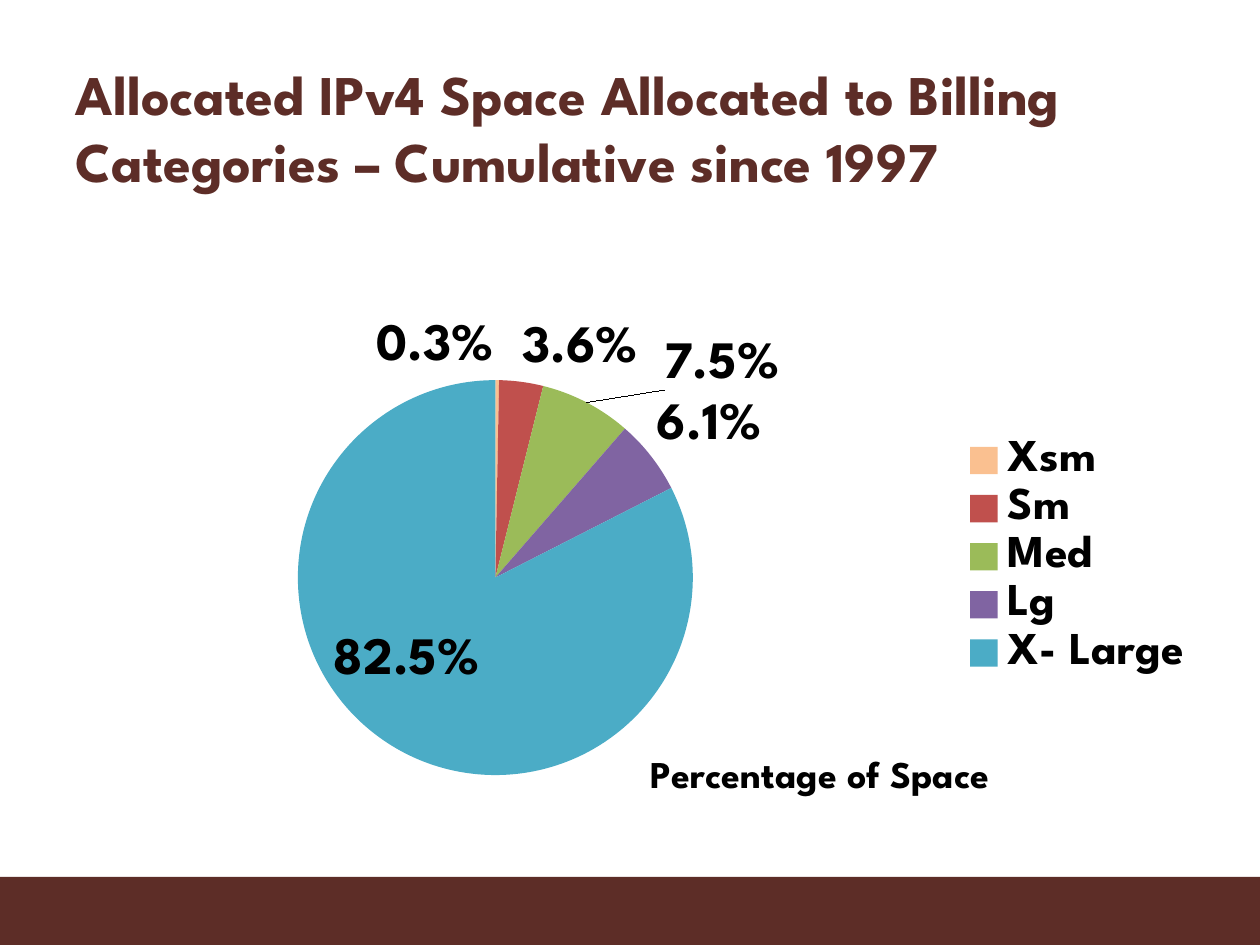
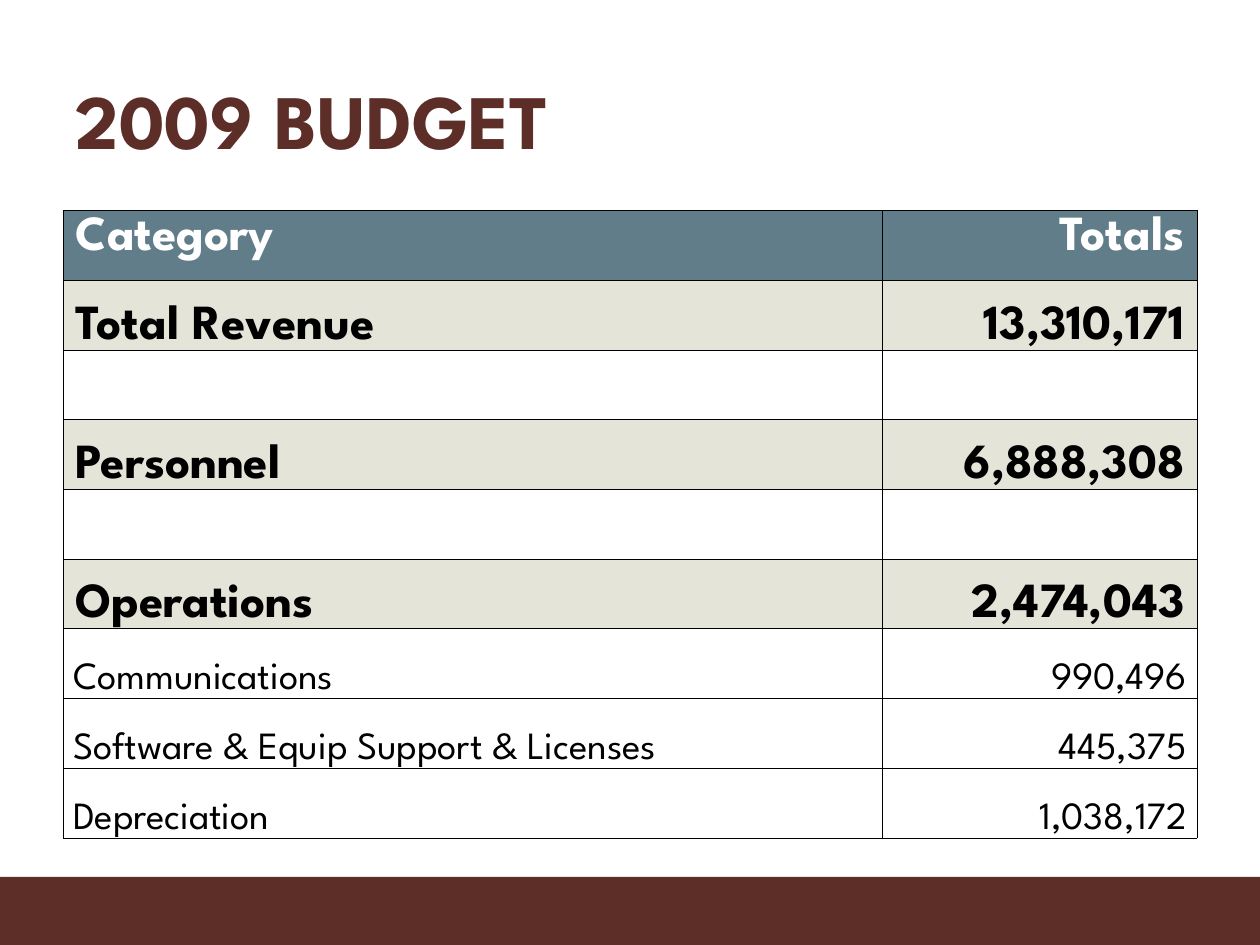
from lxml.etree import SubElement
from pptx import Presentation
from pptx.chart.data import CategoryChartData
from pptx.dml.color import RGBColor
from pptx.enum.chart import XL_CHART_TYPE, XL_LABEL_POSITION, XL_LEGEND_POSITION
from pptx.enum.shapes import MSO_SHAPE
from pptx.enum.text import MSO_ANCHOR, MSO_AUTO_SIZE, PP_ALIGN
from pptx.oxml import parse_xml
from pptx.oxml.ns import nsdecls, qn
from pptx.util import Inches, Pt

FACE = "League Spartan"
BROWN = RGBColor(0x5D, 0x2D, 0x27)
SLATE = RGBColor(0x61, 0x7D, 0x89)
SAND = RGBColor(0xE5, 0xE4, 0xD9)
WHITE = RGBColor(0xFF, 0xFF, 0xFF)
BLACK = RGBColor(0, 0, 0)
PEACH = RGBColor(0xFA, 0xC0, 0x90)
RED = RGBColor(0xC0, 0x50, 0x4D)
GREEN = RGBColor(0x9B, 0xBB, 0x59)
PURPLE = RGBColor(0x80, 0x64, 0xA2)
TEAL = RGBColor(0x4B, 0xAC, 0xC6)

OUT, MID = XL_LABEL_POSITION.OUTSIDE_END, XL_LABEL_POSITION.CENTER

SPACE_TITLE = "Allocated IPv4 Space Allocated to Billing Categories – Cumulative since 1997"
SERIES = "Percentage of Space"
# name, share, colour, label position, label shift as a fraction of the chart
SLICES = [
    ("Xsm", 0.003, PEACH, OUT, (-0.05, 0)),
    ("Sm", 0.036, RED, OUT, None),
    ("Med", 0.075, GREEN, OUT, (0.06, -0.01)),
    ("Lg", 0.061, PURPLE, OUT, None),
    ("X- Large", 0.825, TEAL, MID, (-0.03, 0)),
]

BUDGET_TITLE = "2009 BUDGET"
# row style, category, total
BUDGET = [
    ("head", "Category", "Totals"),
    ("sum", "Total Revenue", "13,310,171"),
    ("item", "", ""),
    ("sum", "Personnel", "6,888,308"),
    ("item", "", ""),
    ("sum", "Operations", "2,474,043"),
    ("item", "Communications", "990,496"),
    ("item", "Software & Equip Support & Licenses", "445,375"),
    ("item", "Depreciation", "1,038,172"),
]
# fill, text colour, size, bold, side margin, top and bottom margin, anchor
STYLES = {
    "head": (SLATE, WHITE, 28, True, 0.1, 0.05, MSO_ANCHOR.TOP),
    "sum": (SAND, BLACK, 28, True, 0.1, 0, MSO_ANCHOR.BOTTOM),
    "item": (WHITE, BLACK, 22, False, 0.08, 0, MSO_ANCHOR.BOTTOM),
}


def style(font, size, color=BLACK, bold=True):
    font.name, font.size, font.bold = FACE, Pt(size), bold
    font.color.rgb = color


def start(deck, text, size, height):
    """Add a slide with the title and the bottom band."""
    slide = deck.slides.add_slide(deck.slide_layouts[5])
    band = slide.shapes.add_shape(
        MSO_SHAPE.RECTANGLE, 0, Inches(6.96), Inches(10), Inches(0.54))
    band.shadow.inherit = False
    band.fill.solid()
    band.fill.fore_color.rgb = BROWN
    band.line.fill.background()

    title = slide.shapes.title
    title.left, title.top = Inches(0.5), Inches(0.38)
    title.width, title.height = Inches(9), Inches(height)
    frame = title.text_frame
    frame.auto_size = MSO_AUTO_SIZE.NONE
    frame.vertical_anchor = MSO_ANCHOR.MIDDLE
    par = frame.paragraphs[0]
    par.alignment = PP_ALIGN.LEFT
    run = par.add_run()
    run.text = text
    style(run.font, size, BROWN)
    return slide


def place(part, index, edge=False, inner=False, **spots):
    """Give a chart part a manual layout, as fractions of the chart."""
    for old in part.findall(qn("c:layout")):
        part.remove(old)
    layout = parse_xml(f"<c:layout {nsdecls('c')}><c:manualLayout/></c:layout>")
    pairs = [("layoutTarget", "inner")] if inner else []
    if edge:
        pairs += [("xMode", "edge"), ("yMode", "edge")]
    for tag, val in pairs + list(spots.items()):
        SubElement(layout[0], qn(f"c:{tag}")).set("val", str(val))
    part.insert(index, layout)


def add_pie(slide):
    data = CategoryChartData(number_format="0.0%")
    data.categories = [row[0] for row in SLICES]
    data.add_series(SERIES, [row[1] for row in SLICES])
    chart = slide.shapes.add_chart(
        XL_CHART_TYPE.PIE, 0, Inches(1.83), Inches(9.83), Inches(4.75), data).chart
    chart.font.name, chart.font.size = "Calibri", Pt(18)
    chart.font.color.rgb = BLACK

    chart.has_title = True
    run = chart.chart_title.text_frame.paragraphs[0].add_run()
    run.text = SERIES
    style(run.font, 21.6)
    place(chart.chart_title._element, 1, edge=True, x=0.52, y=0.87)

    chart.has_legend = True
    legend = chart.legend
    legend.position = XL_LEGEND_POSITION.RIGHT
    legend.include_in_layout = False
    style(legend.font, 26)
    place(legend._element, 1, edge=True, x=0.77, y=0.34, w=0.2, h=0.41)

    plot = chart.plots[0]
    plot.vary_by_categories = True
    place(plot._element.getparent(), 0, edge=True, inner=True,
          x=0.24, y=0.25, w=0.32, h=0.66)

    series = plot.series[0]
    labels = series.data_labels
    labels.show_value = True
    labels.number_format, labels.number_format_is_linked = "0.0%", False
    style(labels.font, 30)
    for i, (_, _, color, spot, shift) in enumerate(SLICES):
        point = series.points[i]
        point.format.fill.solid()
        point.format.fill.fore_color.rgb = color
        label = point.data_label
        style(label.font, 30)
        label.position = spot
        if shift:
            node = series._element.xpath(f"c:dLbls/c:dLbl[c:idx/@val='{i}']")[0]
            place(node, 1, x=shift[0], y=shift[1])


def border(cell):
    props = cell._tc.get_or_add_tcPr()
    for i, side in enumerate(("lnL", "lnR", "lnT", "lnB")):
        props.insert(i, parse_xml(
            f'<a:{side} {nsdecls("a")} w="{Pt(0.25)}"><a:solidFill>'
            f'<a:srgbClr val="{BLACK}"/></a:solidFill></a:{side}>'))


def fill_cell(cell, kind, text, align):
    fill, color, size, bold, side, edge, anchor = STYLES[kind]
    cell.fill.solid()
    cell.fill.fore_color.rgb = fill
    cell.margin_left = cell.margin_right = Inches(side)
    cell.margin_top = cell.margin_bottom = Inches(edge)
    cell.vertical_anchor = anchor
    border(cell)
    par = cell.text_frame.paragraphs[0]
    par.alignment = align
    if text:
        run = par.add_run()
        run.text = text
        style(run.font, size, color, bold)


def add_budget(slide):
    table = slide.shapes.add_table(
        len(BUDGET), 2, Inches(0.5), Inches(1.67), Inches(9), Inches(4.98)).table
    table.horz_banding = False
    table.columns[0].width, table.columns[1].width = Inches(6.5), Inches(2.5)
    for r, (kind, name, total) in enumerate(BUDGET):
        fill_cell(table.cell(r, 0), kind, name, PP_ALIGN.LEFT)
        fill_cell(table.cell(r, 1), kind, total, PP_ALIGN.RIGHT)


def main():
    deck = Presentation()
    deck.slide_width, deck.slide_height = Inches(10), Inches(7.5)
    add_pie(start(deck, SPACE_TITLE, 32, 1.25))
    add_budget(start(deck, BUDGET_TITLE, 44, 1.12))
    deck.save("out.pptx")


if __name__ == "__main__":
    main()
